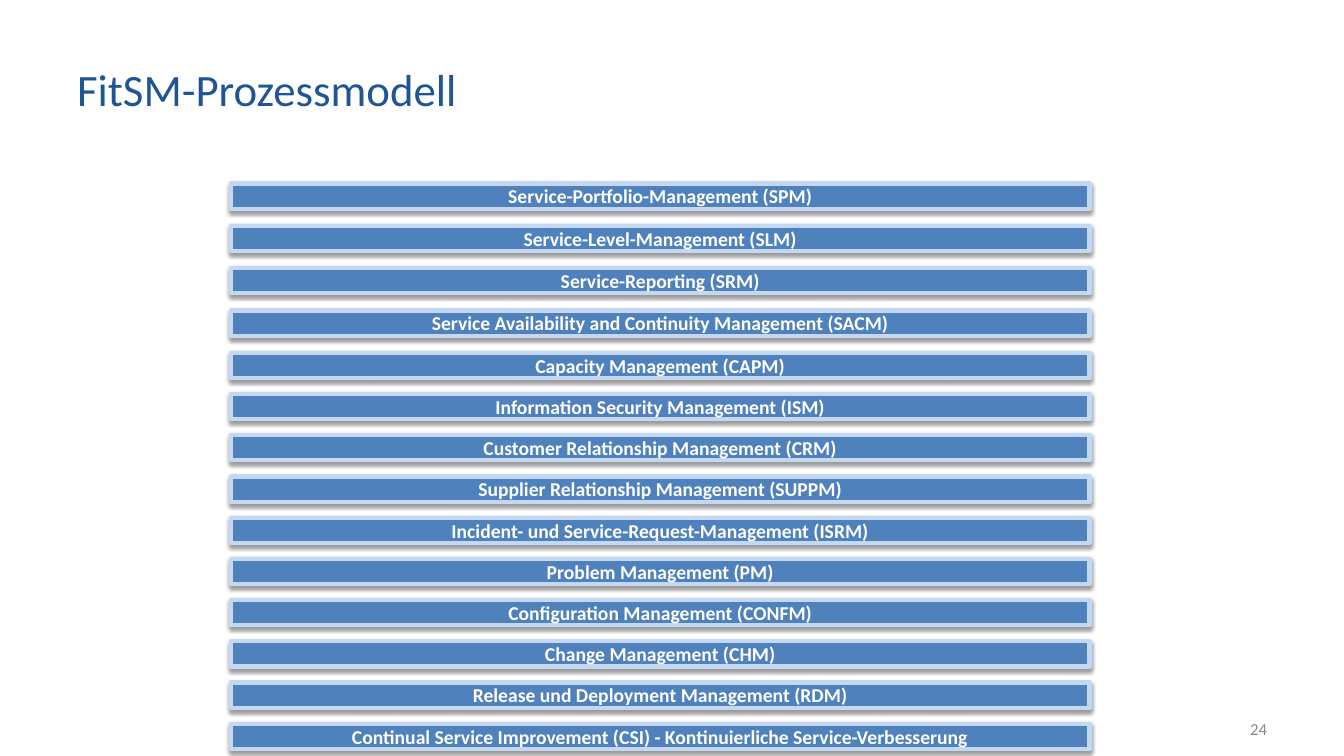
from dataclasses import dataclass

import pptx
import pptx.dml.color
import pptx.enum.shapes
import pptx.enum.text
import pptx.oxml
import pptx.oxml.ns
import pptx.shapes.autoshape
import pptx.slide
import pptx.util

Pt = pptx.util.Pt
Align = pptx.enum.text.PP_ALIGN


@dataclass(frozen=True)
class Theme:
    font: str = "Calibri"
    title: str = "205595"
    number: str = "888888"
    bar: str = "4F81BD"
    border: str = "C5D8F1"
    bar_text: str = "FFFFFF"
    shadow: str = "000000"
    title_size: float = 32
    number_size: float = 12
    bar_size: float = 14


@dataclass(frozen=True)
class Box:
    left: float
    top: float
    width: float
    height: float

    def lengths(self) -> tuple[int, int, int, int]:
        return Pt(self.left), Pt(self.top), Pt(self.width), Pt(self.height)


@dataclass(frozen=True)
class Label:
    text: str
    size: float
    color: str
    align: Align
    bold: bool = False


THEME = Theme()
PROCESSES = (
    "Service-Portfolio-Management (SPM)",
    "Service-Level-Management (SLM)",
    "Service-Reporting (SRM)",
    "Service Availability and Continuity Management (SACM)",
    "Capacity Management (CAPM)",
    "Information Security Management (ISM)",
    "Customer Relationship Management (CRM)",
    "Supplier Relationship Management (SUPPM)",
    "Incident- und Service-Request-Management (ISRM)",
    "Problem Management (PM)",
    "Configuration Management (CONFM)",
    "Change Management (CHM)",
    "Release und Deployment Management (RDM)",
    "Continual Service Improvement (CSI) - Kontinuierliche Service-Verbesserung",
)
FIRST_TOP = 131.04
WIDE_STEPS = 4
WIDE_PITCH, PITCH = 30.24, 29.44


def rgb(color: str) -> pptx.dml.color.RGBColor:
    return pptx.dml.color.RGBColor.from_string(color)


def write(sp: pptx.shapes.autoshape.Shape, label: Label) -> None:
    tf = sp.text_frame
    tf.word_wrap = True
    tf.vertical_anchor = pptx.enum.text.MSO_ANCHOR.MIDDLE
    p = tf.paragraphs[0]
    p.text = label.text
    p.alignment = label.align
    p.font.name = THEME.font
    p.font.size = Pt(label.size)
    p.font.bold = label.bold
    p.font.color.rgb = rgb(label.color)


def add_text(s: pptx.slide.Slide, box: Box, label: Label) -> None:
    write(s.shapes.add_textbox(*box.lengths()), label)


def add_shadow(sp: pptx.shapes.autoshape.Shape) -> None:
    sp.shadow.inherit = False
    effects = sp.element.spPr.find(pptx.oxml.ns.qn("a:effectLst"))
    effects.append(pptx.oxml.parse_xml(
        f'<a:outerShdw {pptx.oxml.ns.nsdecls("a")} blurRad="{Pt(3.1)}" '
        f'dist="{Pt(1.6)}" dir="5400000" rotWithShape="0">'
        f'<a:srgbClr val="{THEME.shadow}"><a:alpha val="38000"/></a:srgbClr>'
        '</a:outerShdw>'
    ))


def add_bar(s: pptx.slide.Slide, box: Box, text: str) -> None:
    sp = s.shapes.add_shape(pptx.enum.shapes.MSO_SHAPE.RECTANGLE, *box.lengths())
    sp.fill.solid()
    sp.fill.fore_color.rgb = rgb(THEME.bar)
    sp.line.color.rgb = rgb(THEME.border)
    sp.line.width = Pt(3)
    add_shadow(sp)
    write(sp, Label(text, THEME.bar_size, THEME.bar_text, Align.CENTER, True))


def main() -> None:
    prs = pptx.Presentation()
    prs.slide_width, prs.slide_height = Pt(960), Pt(540)
    s = prs.slides.add_slide(prs.slide_layouts[6])
    add_text(s, Box(48, 21.6, 713.5, 82.8),
             Label("FitSM-Prozessmodell", THEME.title_size, THEME.title, Align.LEFT))
    add_text(s, Box(688.3, 506.2, 223.9, 28.8),
             Label("24", THEME.number_size, THEME.number, Align.RIGHT))
    for i, process in enumerate(PROCESSES):
        wide = min(i, WIDE_STEPS)
        top = FIRST_TOP + wide * WIDE_PITCH + (i - wide) * PITCH
        add_bar(s, Box(164.9, top, 613.4, 18), process)
    prs.save("out.pptx")


if __name__ == "__main__":
    main()
